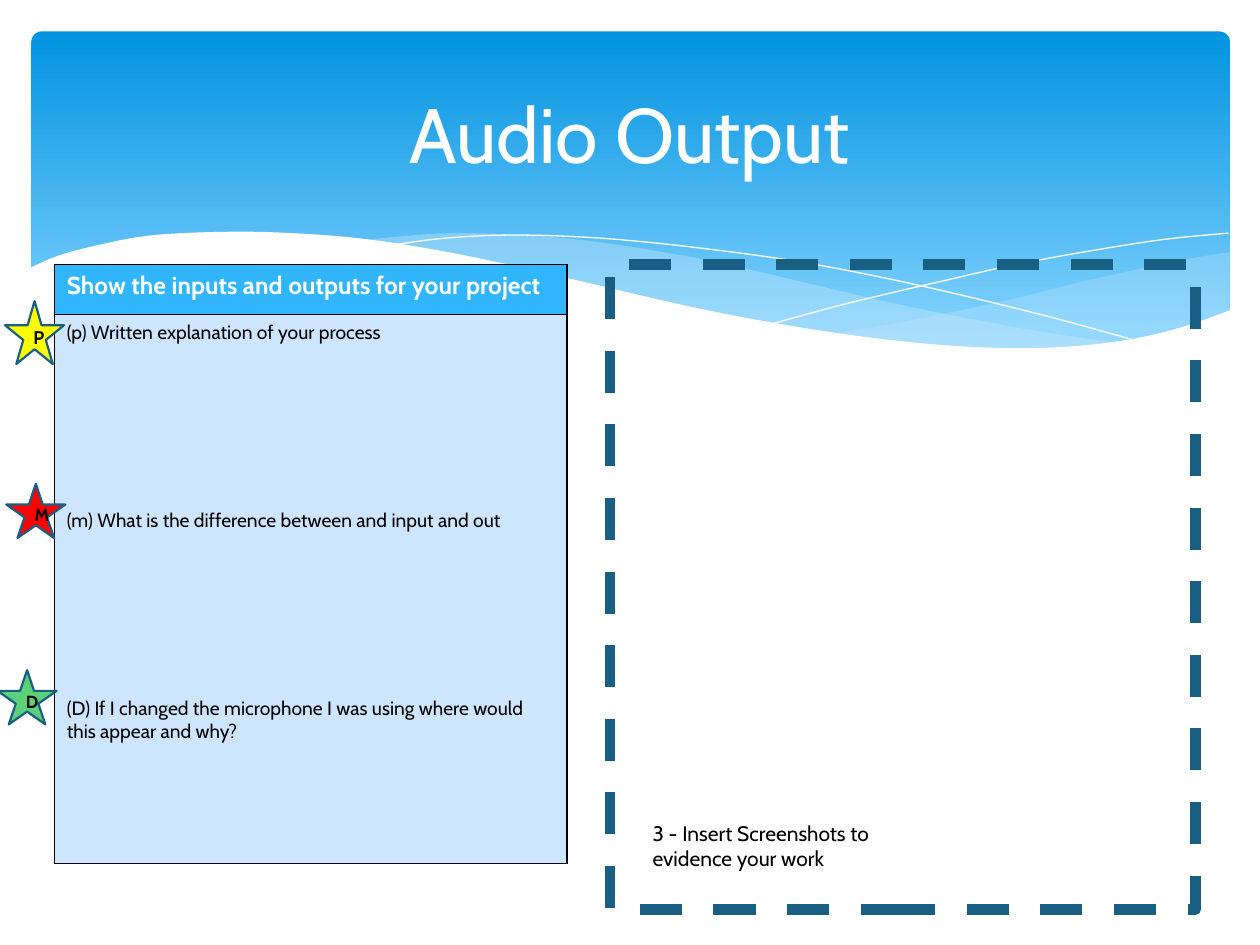
from typing import NamedTuple

from lxml.etree import SubElement
from pptx import Presentation
from pptx.dml.color import RGBColor
from pptx.enum.dml import MSO_LINE
from pptx.enum.shapes import MSO_SHAPE as Preset
from pptx.enum.text import MSO_ANCHOR as Anchor, PP_ALIGN as Align
from pptx.oxml.ns import qn
from pptx.util import Pt

FONT = "Cabin"
WHITE, BLACK, NAVY, MIST = "FFFFFF", "000000", "195F84", "C6E7FC"
CURVE_STEPS = 5

Point = tuple[float, float]


class Box(NamedTuple):
    left: float
    top: float
    width: float
    height: float


class Wave(NamedTuple):
    curves: list[list[Point]]  # smooth runs, joined by straight corners
    fill: str | None = None
    opacity: int = 100


class Star(NamedTuple):
    letter: str
    box: Box
    fill: str
    size: float = 10


WAVES = [
    Wave([[(702.7, 144), (673.2, 149), (619.9, 160.6), (579.6, 170.6),
           (524.9, 182.2), (475.9, 190.8)],
          [(475.9, 190.8), (517.7, 195.8), (562.3, 199.4), (607.7, 199.4),
           (645.8, 194.4), (678.2, 186.5), (702.7, 177.8)]], MIST, 29),
    Wave([[(643, 196.6), (602.6, 190.8), (558, 182.9), (508.3, 172.8),
           (452.9, 159.8), (409.7, 149.8), (370.1, 142.6), (334.8, 137.5),
           (302.4, 134.6), (259.9, 133.2), (225.4, 135.4), (205.9, 137.5)],
          [(205.9, 137.5), (246.2, 143.3), (290.9, 151.9), (323.3, 159.8),
           (381.6, 172.8), (432.7, 183.6), (478.8, 191.5), (519.8, 197.3),
           (565.2, 200.2), (603.4, 200.2), (643, 196.6)]], MIST, 40),
    Wave([[(222.5, 140.4), (247.7, 136.8), (278.6, 134.6), (311.8, 134.6),
           (352.1, 136.8), (400.3, 141.8), (457.9, 149.8), (523.4, 162.7),
           (598.3, 180.7), (653, 195.8)]]),
    Wave([[(441.4, 185), (483.8, 173.5), (538.6, 160.6), (580.3, 151.2),
           (623.5, 143.3), (665.3, 136.8), (702, 133.2)]]),
    Wave([[(703.4, 177.1), (676.8, 186.5), (647.3, 193.7), (612, 198),
           (571, 198.9), (522.7, 195.8), (466.6, 188.6), (399.6, 176.4),
           (321.8, 158.4), (262.8, 145.4), (210.2, 136.8), (165.6, 133.2),
           (127.4, 132.5), (85.7, 134.6), (54.7, 140.4), (33.1, 146.2),
           (16.6, 153.4)],
          [(16.6, 236.9), (703.4, 236.9)]], WHITE),
]

STARS = [
    Star("M", Box(3.6, 276.5, 33.8, 31), "FF0000"),
    Star("P", Box(2.9, 172.1, 33.8, 36), "FFFF00", 10.5),
    Star("D", Box(-1.4, 383, 33.8, 31), "5BD078"),
]

QUESTIONS = [
    "(p) Written explanation of your process",
    "(m) What is the difference between and input and out",
    "(D) If I changed the microphone I was using where would this appear and why?",
]
ANSWER_SPACE = 94


def color(value: str) -> RGBColor:
    return RGBColor.from_string(value)


def points(box: Box) -> list[Pt]:
    return [Pt(length) for length in box]


def paint(shape, fill: str | None = None, line: str | None = None, width: float = 0) -> None:
    shape.shadow.inherit = False
    if fill:
        shape.fill.solid()
        shape.fill.fore_color.rgb = color(fill)
    else:
        shape.fill.background()
    if line:
        shape.line.color.rgb = color(line)
        shape.line.width = Pt(width)
    else:
        shape.line.fill.background()


def write(frame, *texts: str, size: float, ink: str = BLACK, bold: bool = False,
          align: Align = Align.LEFT, anchor: Anchor = Anchor.TOP, gap: float = 0) -> None:
    """Write one paragraph per text, with a gap between paragraphs."""
    frame.word_wrap = True
    frame.vertical_anchor = anchor
    for index, text in enumerate(texts):
        paragraph = frame.add_paragraph() if index else frame.paragraphs[0]
        paragraph.alignment = align
        paragraph.space_before = Pt(gap if index else 0)
        run = paragraph.add_run()
        run.text = text
        run.font.name, run.font.size, run.font.bold = FONT, Pt(size), bold
        run.font.color.rgb = color(ink)


def smooth(curve: list[Point]) -> list[Point]:
    """Catmull-Rom spline through the points of a curve."""
    padded = [curve[0], *curve, curve[-1]]
    result = [curve[0]]
    for a, b, c, d in zip(padded, padded[1:], padded[2:], padded[3:]):
        for step in range(1, CURVE_STEPS + 1):
            t = step / CURVE_STEPS
            x, y = (
                (2 * q + (r - p) * t + (2 * p - 5 * q + 4 * r - s) * t**2
                 + (3 * q - p - 3 * r + s) * t**3) / 2
                for p, q, r, s in zip(a, b, c, d)
            )
            result.append((x, y))
    return result


def add_wave(slide, wave: Wave) -> None:
    outline = [(Pt(x), Pt(y)) for curve in wave.curves for x, y in smooth(curve)]
    builder = slide.shapes.build_freeform(*outline[0])
    builder.add_line_segments(outline[1:], close=wave.fill is not None)
    shape = builder.convert_to_shape()
    paint(shape, wave.fill, None if wave.fill else WHITE)
    if wave.opacity < 100:
        rgb = shape.fill._xPr.find(qn("a:solidFill"))[0]
        SubElement(rgb, qn("a:alpha"), val=str(wave.opacity * 1000))


def add_banner(slide) -> None:
    banner = slide.shapes.add_shape(Preset.ROUNDED_RECTANGLE, *points(Box(18, 18, 684.7, 194.4)))
    banner.adjustments[0] = 0.03
    paint(banner)
    banner.fill.gradient()
    banner.fill.gradient_angle = 270
    for stop, (position, shade) in zip(banner.fill.gradient_stops, [(0, "0293E0"), (0.9, "83D3FE")]):
        stop.position = position
        stop.color.rgb = color(shade)


def add_star(slide, star: Star) -> None:
    shape = slide.shapes.add_shape(Preset.STAR_5_POINT, *points(star.box))
    paint(shape, star.fill, NAVY, 1.25)
    write(shape.text_frame, star.letter, size=star.size, bold=True,
          align=Align.CENTER, anchor=Anchor.MIDDLE)


def style_cell(cell, fill: str) -> None:
    properties = cell._tc.get_or_add_tcPr()
    for side in ("lnL", "lnR", "lnT", "lnB"):
        border = SubElement(properties, qn(f"a:{side}"), w=str(Pt(1)))
        SubElement(SubElement(border, qn("a:solidFill")), qn("a:srgbClr"), val=BLACK)
    cell.fill.solid()
    cell.fill.fore_color.rgb = color(fill)


def add_questions(slide) -> None:
    table = slide.shapes.add_table(2, 1, *points(Box(31, 151.2, 293, 342))).table
    table.rows[0].height, table.rows[1].height = Pt(28.4), Pt(313.9)
    header, body = table.cell(0, 0), table.cell(1, 0)
    style_cell(header, "31B6FD")
    style_cell(body, "CEE5FE")
    write(header.text_frame, "Show the inputs and outputs for your project",
          size=14, ink=WHITE, bold=True)
    write(body.text_frame, *QUESTIONS, size=11, gap=ANSWER_SPACE)


def add_text(slide, box: Box, text: str, **style) -> None:
    write(slide.shapes.add_textbox(*points(box)).text_frame, text, **style)


def main() -> None:
    presentation = Presentation()
    presentation.slide_width, presentation.slide_height = Pt(720), Pt(540)
    slide = presentation.slides.add_slide(presentation.slide_layouts[6])

    # Banner with waves and title
    add_banner(slide)
    for wave in WAVES:
        add_wave(slide, wave)
    add_text(slide, Box(36, 26.6, 648, 98.6), "Audio Output", size=44, ink=WHITE,
             align=Align.CENTER, anchor=Anchor.MIDDLE)

    # Screenshot area
    frame = slide.shapes.add_shape(Preset.RECTANGLE, *points(Box(348.5, 151.2, 334.8, 368.6)))
    paint(frame, line=NAVY, width=6)
    frame.line.dash_style = MSO_LINE.DASH
    add_text(slide, Box(365.8, 465.1, 169.9, 36),
             "3 - Insert Screenshots to evidence your work", size=12)

    # Questions with their grade stars
    add_questions(slide)
    for star in STARS:
        add_star(slide, star)

    presentation.save("out.pptx")


if __name__ == "__main__":
    main()
